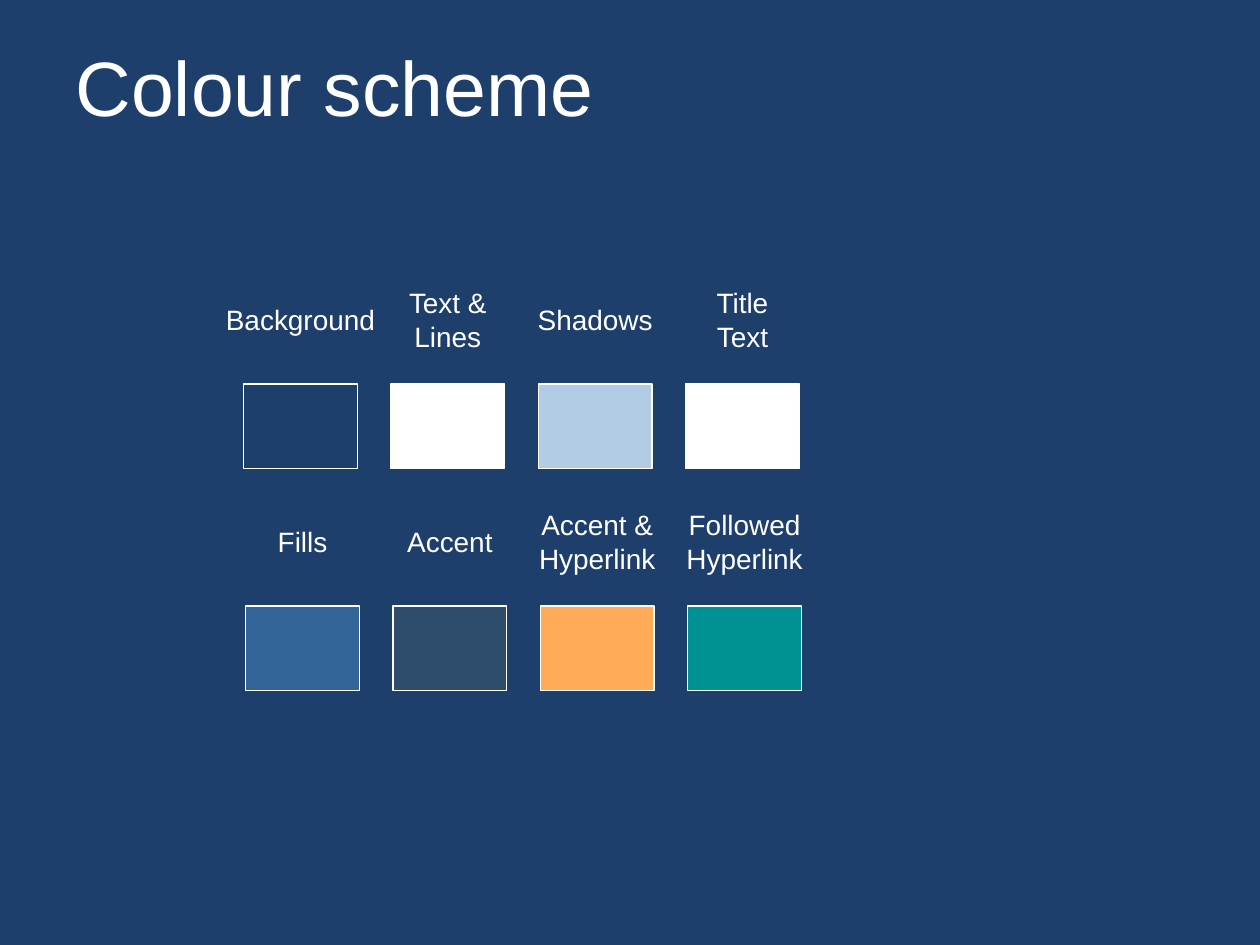
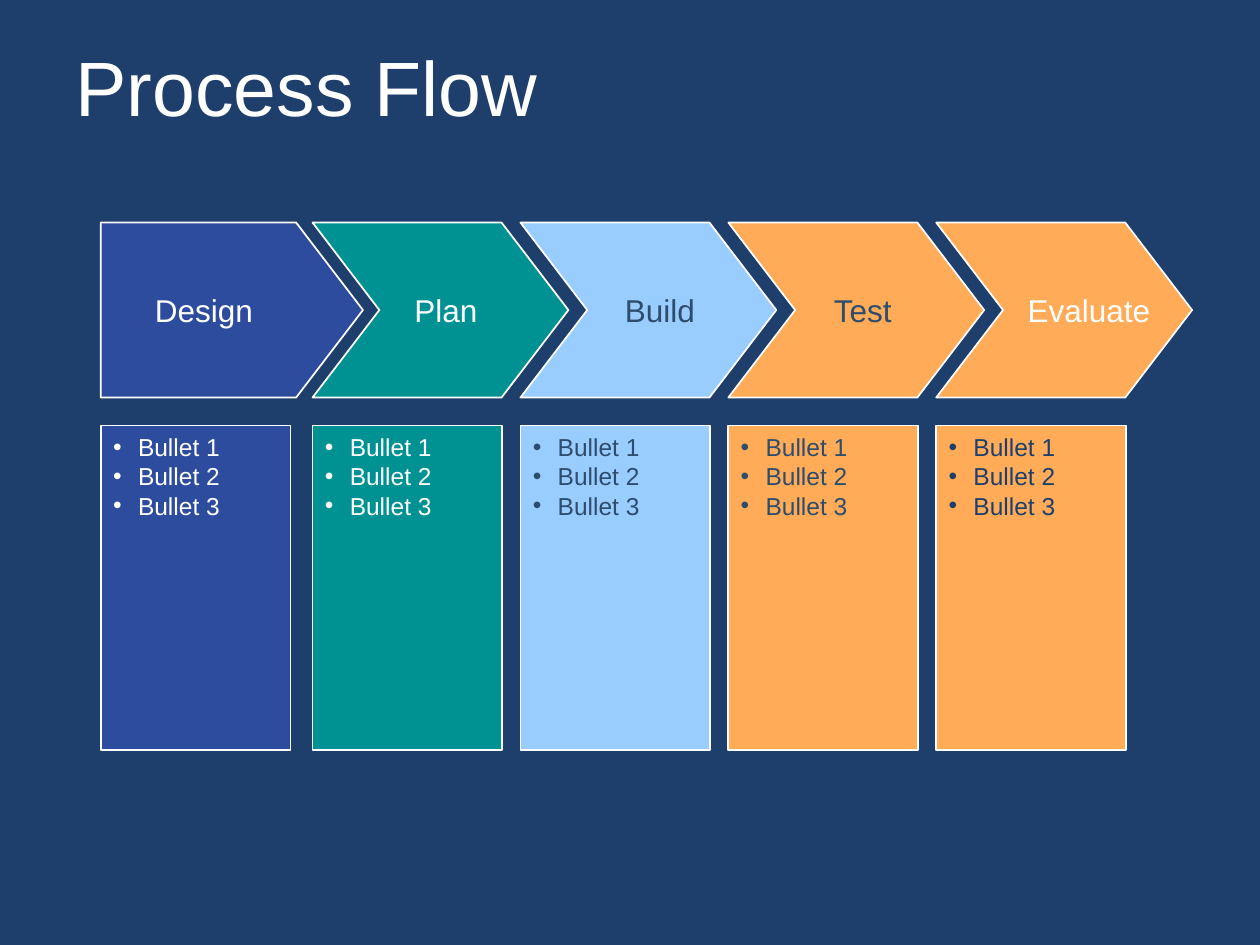
from lxml import etree
from pptx import Presentation
from pptx.dml.color import RGBColor
from pptx.enum.shapes import MSO_SHAPE
from pptx.enum.text import MSO_ANCHOR, PP_ALIGN
from pptx.oxml.ns import qn
from pptx.util import Pt

RECTANGLE, PENTAGON, CHEVRON = MSO_SHAPE.RECTANGLE, MSO_SHAPE.PENTAGON, MSO_SHAPE.CHEVRON
TOP, MIDDLE = MSO_ANCHOR.TOP, MSO_ANCHOR.MIDDLE
LEFT, CENTER = PP_ALIGN.LEFT, PP_ALIGN.CENTER

COLORS = {
    "navy": "1E3F6C", "white": "FFFFFF", "pale": "B3CCE6", "steel": "336599",
    "slate": "2E4C6B", "orange": "FFAB57", "teal": "009193", "indigo": "2E4C9D",
    "sky": "99CCFF",
}
FONT = "Arial"

# Row: left, top, then (label, fill) for each swatch; \n starts a paragraph, \v a line
SWATCH_ROWS = [
    (139.2, 219.4, [("Background", "navy"), ("Text &\nLines", "white"),
                    ("Shadows", "pale"), ("Title\vText", "white")]),
    (140.4, 346.4, [("Fills", "steel"), ("Accent", "slate"),
                    ("Accent &\nHyperlink", "orange"), ("Followed\nHyperlink", "teal")]),
]
SWATCH_WIDTH, SWATCH_HEIGHT, SWATCH_PITCH = 65, 48.3, 84.2
LABEL_WIDTH, LABEL_HEIGHT, LABEL_RISE = 100, 46, 37.1

# Stage: name, fill, name colour, bullet colour, left of the name box
STAGES = [
    ("Design", "indigo", "white", "white", 81.4),
    ("Plan", "teal", "white", "white", 229.7),
    ("Build", "sky", "slate", "slate", 350),
    ("Test", "orange", "slate", "slate", 469.4),
    ("Evaluate", "orange", "white", "navy", 580.1),
]
BULLETS = ["Bullet 1", "Bullet 2", "Bullet 3"]
FIRST_LEFT, SECOND_LEFT, STAGE_PITCH = 57.6, 178.6, 118.8
ARROW_TOP, ARROW_HEIGHT, ARROW_POINT = 127.2, 100, 38.2
FIRST_ARROW_WIDTH, ARROW_WIDTH = 149.8, 146.2
PANEL_TOP, PANEL_WIDTH, PANEL_HEIGHT = 243.2, 108.5, 185.2
NAME_TOP, NAME_WIDTH, NAME_HEIGHT = 162.8, 96, 29
BULLET_INDENT = 14.2


def color(name):
    return RGBColor.from_string(COLORS[name])


def apply_format(target, values):
    for name, value in values.items():
        setattr(target, name, value)


def style_paragraph(para, size, ink, align):
    para.alignment = align
    apply_format(para.font, {"name": FONT, "size": Pt(size)})
    para.font.color.rgb = color(ink)


def write(shape, text, size, ink, align=LEFT, anchor=TOP):
    frame = shape.text_frame
    frame.text = text
    apply_format(frame, {"word_wrap": True, "vertical_anchor": anchor})
    for para in frame.paragraphs:
        style_paragraph(para, size, ink, align)


def add_slide(deck, title):
    page = deck.slides.add_slide(deck.slide_layouts[5])
    apply_format(page.shapes.title, {"left": Pt(36), "top": Pt(20.5),
                                     "width": Pt(653), "height": Pt(56.9)})
    write(page.shapes.title, title, 44, "white", anchor=MIDDLE)
    return page


def add_outlined(page, kind, left, top, width, height, fill, line_width):
    shape = page.shapes.add_shape(kind, Pt(left), Pt(top), Pt(width), Pt(height))
    shape.shadow.inherit = False
    shape.fill.solid()
    shape.fill.fore_color.rgb = color(fill)
    shape.line.color.rgb = color("white")
    shape.line.width = Pt(line_width)
    return shape


def add_label(page, text, left, top, width, height, size, ink, **placing):
    box = page.shapes.add_textbox(Pt(left), Pt(top), Pt(width), Pt(height))
    write(box, text, size, ink, **placing)


def add_bullet(para):
    properties = para._p.get_or_add_pPr()
    properties.set("marL", str(Pt(BULLET_INDENT)))
    properties.set("indent", str(-Pt(BULLET_INDENT)))
    etree.SubElement(properties, qn("a:buFont")).set("typeface", FONT)
    etree.SubElement(properties, qn("a:buChar")).set("char", "•")


def build_colour_scheme(deck):
    page = add_slide(deck, "Colour scheme")
    for row_left, top, swatches in SWATCH_ROWS:
        for column, (label, fill) in enumerate(swatches):
            left = row_left + column * SWATCH_PITCH
            add_outlined(page, RECTANGLE, left, top, SWATCH_WIDTH, SWATCH_HEIGHT, fill, 0.75)
            add_label(page, label, left + (SWATCH_WIDTH - LABEL_WIDTH) / 2,
                      top - LABEL_RISE - LABEL_HEIGHT / 2, LABEL_WIDTH, LABEL_HEIGHT,
                      16, "white", align=CENTER, anchor=MIDDLE)


def build_process_flow(deck):
    page = add_slide(deck, "Process Flow")
    for index, (name, fill, name_ink, bullet_ink, name_left) in enumerate(STAGES):
        if index == 0:
            left, kind, width = FIRST_LEFT, PENTAGON, FIRST_ARROW_WIDTH
        else:
            left, kind, width = SECOND_LEFT + (index - 1) * STAGE_PITCH, CHEVRON, ARROW_WIDTH

        panel = add_outlined(page, RECTANGLE, left, PANEL_TOP, PANEL_WIDTH, PANEL_HEIGHT, fill, 1)
        panel.text_frame.text = "\n".join(BULLETS)
        panel.text_frame.vertical_anchor = TOP
        for para in panel.text_frame.paragraphs:
            add_bullet(para)
            style_paragraph(para, 14, bullet_ink, LEFT)

        arrow = add_outlined(page, kind, left, ARROW_TOP, width, ARROW_HEIGHT, fill, 1)
        arrow.adjustments[0] = ARROW_POINT / ARROW_HEIGHT
        add_label(page, name, name_left, NAME_TOP, NAME_WIDTH, NAME_HEIGHT, 18, name_ink)


def main():
    deck = Presentation()
    apply_format(deck, {"slide_width": Pt(720), "slide_height": Pt(540)})
    background = deck.slide_master.background.fill
    background.solid()
    background.fore_color.rgb = color("navy")
    build_colour_scheme(deck)
    build_process_flow(deck)
    deck.save("out.pptx")


if __name__ == "__main__":
    main()
